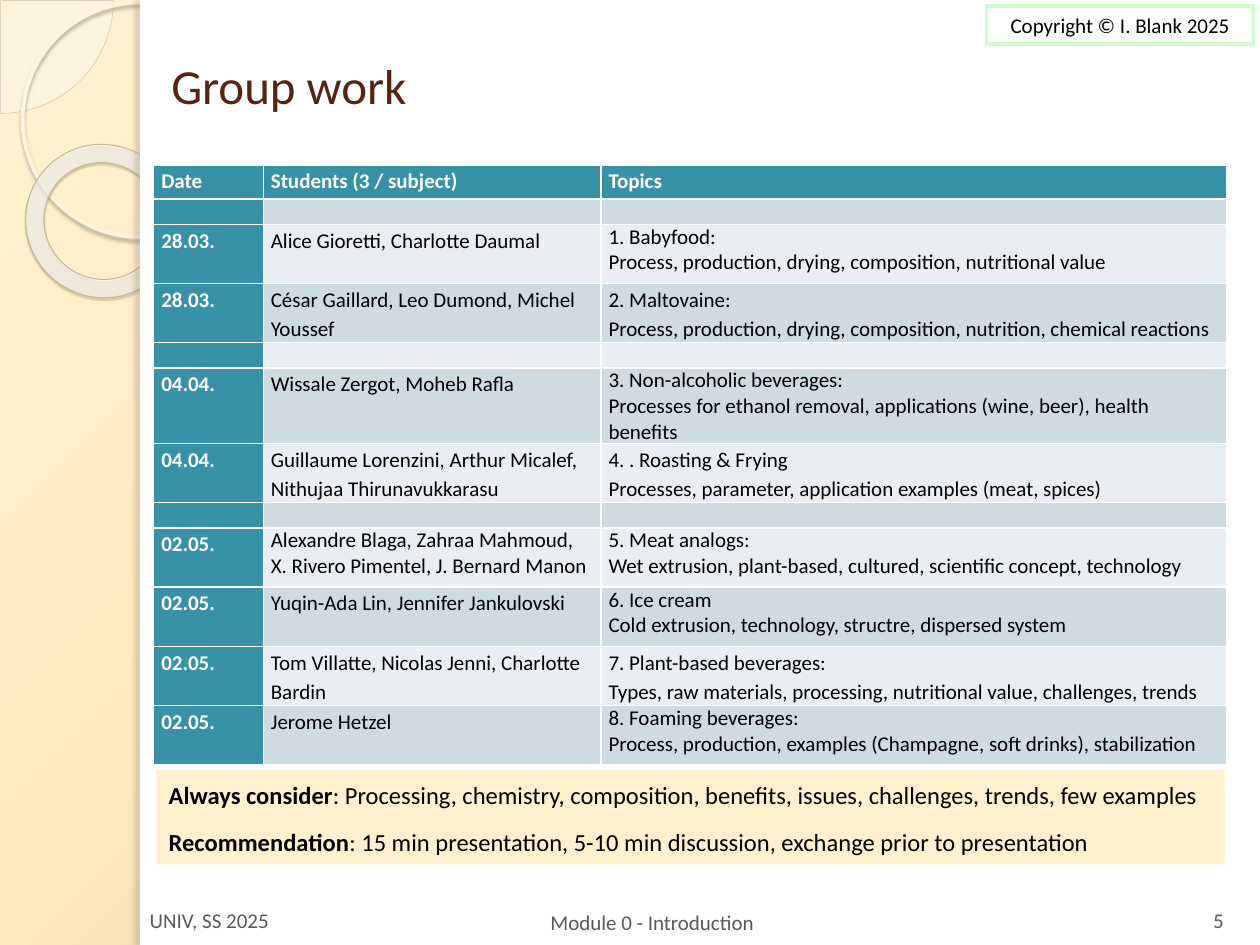
from typing import NamedTuple

from lxml import etree
from pptx import Presentation
from pptx.dml.color import RGBColor
from pptx.enum.shapes import MSO_SHAPE
from pptx.enum.text import MSO_ANCHOR, MSO_AUTO_SIZE, PP_ALIGN
from pptx.oxml.ns import qn
from pptx.util import Inches, Pt

PIE, OVAL, DONUT, RECT = MSO_SHAPE.PIE, MSO_SHAPE.OVAL, MSO_SHAPE.DONUT, MSO_SHAPE.RECTANGLE
TOP, MIDDLE, BOTTOM = MSO_ANCHOR.TOP, MSO_ANCHOR.MIDDLE, MSO_ANCHOR.BOTTOM
LEFT, CENTER = PP_ALIGN.LEFT, PP_ALIGN.CENTER
GROW = MSO_AUTO_SIZE.SHAPE_TO_FIT_TEXT
FONT = "Calibri"
TITLE_ONLY = 5
COLORS = {
    "black": "000000", "white": "FFFFFF", "title": "572314", "footer": "595959",
    "teal": "3891A7", "band_dark": "CEDCE1", "band_light": "E8EEF1",
    "note": "FFF1CE", "copyright": "CCFFCC",
    "pie": "FEFAF4", "pie_line": "D3C39F", "ring": "FFF5DE", "donut_line": "C7B893",
    "ring_shadow": "B0A68F", "donut_shadow": "5A5444", "panel_shadow": "736F63",
}


class Stop(NamedTuple):
    position: int
    color: str
    alpha: int = 100


class Shadow(NamedTuple):
    color: str
    alpha: int
    blur: float
    distance: float
    direction: int


class Session(NamedTuple):
    date: str = ""
    students: str = ""
    topic: tuple[str, ...] = ("",)
    student_spacing: float = 1.15
    topic_spacing: float = 1.0


BREAK = Session(topic_spacing=1.15)
SESSIONS = [
    BREAK,
    Session("28.03.", "Alice Gioretti, Charlotte Daumal",
            ("1. Babyfood:", "Process, production, drying, composition, nutritional value")),
    Session("28.03.", "César Gaillard, Leo Dumond, Michel Youssef",
            ("2. Maltovaine:",
             "Process, production, drying, composition, nutrition, chemical reactions"),
            topic_spacing=1.15),
    BREAK,
    Session("04.04.", "Wissale Zergot, Moheb Rafla",
            ("3. Non-alcoholic beverages:",
             "Processes for ethanol removal, applications (wine, beer), health benefits")),
    Session("04.04.", "Guillaume Lorenzini, Arthur Micalef, Nithujaa Thirunavukkarasu",
            ("4. . Roasting & Frying", "Processes, parameter, application examples (meat, spices)"),
            topic_spacing=1.15),
    BREAK,
    Session("02.05.", "Alexandre Blaga, Zahraa Mahmoud, X. Rivero Pimentel, J. Bernard Manon",
            ("5. Meat analogs:",
             "Wet extrusion, plant-based, cultured, scientific concept, technology"),
            student_spacing=1.0),
    Session("02.05.", "Yuqin-Ada Lin, Jennifer Jankulovski",
            ("6. Ice cream", "Cold extrusion, technology, structre, dispersed system")),
    Session("02.05.", "Tom Villatte, Nicolas Jenni, Charlotte Bardin",
            ("7. Plant-based beverages:",
             "Types, raw materials, processing, nutritional value, challenges, trends"),
            topic_spacing=1.15),
    Session("02.05.", "Jerome Hetzel",
            ("8. Foaming beverages:",
             "Process, production, examples (Champagne, soft drinks), stabilization")),
]


def rgb(name):
    return RGBColor.from_string(COLORS[name])


def write(frame, text, *, lead="", size=12, color="black", bold=False, align=LEFT,
          line_spacing=1.0, space_after=0):
    """Fill the empty first paragraph or add one; lead is a bold opening run."""
    first = frame.paragraphs[0]
    paragraph = frame.add_paragraph() if first.runs else first
    paragraph.alignment = align
    paragraph.line_spacing = line_spacing
    paragraph.space_after = Pt(space_after)
    for words, weight in ((lead, True), (text, bold)):
        if words:
            run = paragraph.add_run()
            run.text = words
            run.font.name, run.font.size, run.font.bold = FONT, Pt(size), weight
            run.font.color.rgb = rgb(color)
    if not paragraph.runs:
        paragraph._p.get_or_add_endParaRPr().set("sz", str(size * 100))


def add_color(parent, color, alpha):
    node = etree.SubElement(parent, qn("a:srgbClr"), val=color)
    if alpha < 100:
        etree.SubElement(node, qn("a:alpha"), val=str(alpha * 1000))


def make_radial(gradient, stops, left, top):
    """Turn a gradient into a circular one centred at left, top (percent)."""
    for child in list(gradient):
        gradient.remove(child)
    stop_list = etree.SubElement(gradient, qn("a:gsLst"))
    for stop in stops:
        node = etree.SubElement(stop_list, qn("a:gs"), pos=str(stop.position * 1000))
        add_color(node, stop.color, stop.alpha)
    circle = etree.SubElement(gradient, qn("a:path"))
    circle.set("path", "circle")
    sides = {"l": left, "t": top, "r": 100 - left, "b": 100 - top}
    etree.SubElement(circle, qn("a:fillToRect"),
                     {side: str(value * 1000) for side, value in sides.items()})


def add_shape(slide, kind, left, top, width, height, *, fill=None, alpha=100,
              line=None, line_width=1.0, shadow=None):
    shape = slide.shapes.add_shape(kind, Inches(left), Inches(top), Inches(width), Inches(height))
    shape.shadow.inherit = False
    if fill:
        shape.fill.solid()
        shape.fill.fore_color.rgb = rgb(fill)
        if alpha < 100:
            solid = shape._element.spPr.find(qn("a:solidFill"))
            etree.SubElement(solid[0], qn("a:alpha"), val=str(alpha * 1000))
    else:
        shape.fill.background()
    if line:
        shape.line.color.rgb = rgb(line)
        shape.line.width = Pt(line_width)
    else:
        shape.line.fill.background()
    if shadow:
        effects = shape._element.spPr.find(qn("a:effectLst"))
        outer = etree.SubElement(effects, qn("a:outerShdw"), blurRad=str(Pt(shadow.blur)),
                                 dist=str(Pt(shadow.distance)),
                                 dir=str(shadow.direction * 60000), rotWithShape="0")
        add_color(outer, COLORS[shadow.color], shadow.alpha)
    return shape


def add_label(slide, text, left, top, width, anchor, **text_format):
    box = slide.shapes.add_textbox(Inches(left), Inches(top), Inches(width), Inches(0.36))
    box.text_frame.word_wrap = True
    box.text_frame.vertical_anchor = anchor
    write(box.text_frame, text, color="footer", **text_format)


def draw_decoration(slide):
    slide.background.fill.gradient()
    make_radial(slide._element.xpath("./p:cSld/p:bg//a:gradFill")[0],
                [Stop(0, "FFF1D3"), Stop(40, "FFEBBE"), Stop(100, "C9B484")], -24, -20)
    pie = add_shape(slide, PIE, -0.89, -0.89, 1.79, 1.79, fill="pie", alpha=33,
                    line="pie_line", line_width=0.25)
    pie.adjustments[0], pie.adjustments[1] = 0, 54.02
    add_shape(slide, OVAL, 0.18, 0.02, 1.86, 1.86, line="ring", line_width=2.15,
              shadow=Shadow("ring_shadow", 85, 2, 2, 90))
    donut = add_shape(slide, DONUT, 0.2, 1.15, 1.23, 1.21, line="donut_line", line_width=0.58,
                      shadow=Shadow("donut_shadow", 35, 1, 1.2, 75))
    donut.adjustments[0] = 0.12
    donut.rotation = 38.6
    donut.fill.gradient()
    make_radial(donut._element.spPr.find(qn("a:gradFill")),
                [Stop(0, "FFFCF6", 70), Stop(70, "FFFEFB", 55), Stop(100, "F0D28E", 60)], -408, -50)
    add_shape(slide, RECT, 1.11, 0, 8.89, 7.5, fill="white")
    add_shape(slide, RECT, 1.11, 0, 0.08, 7.5, fill="white",
              shadow=Shadow("panel_shadow", 25, 3, 3, 180))


def fill_cell(cell, lines, fill, **text_format):
    cell.margin_left = cell.margin_right = Inches(0.06)
    cell.margin_top = cell.margin_bottom = 0
    cell.fill.solid()
    cell.fill.fore_color.rgb = rgb(fill)
    for line in lines:
        write(cell.text_frame, line, **text_format)


def draw_schedule(slide):
    table = slide.shapes.add_table(len(SESSIONS) + 1, 3, Inches(1.22), Inches(1.31),
                                   Inches(8.52), Inches(4.64)).table
    table.first_col = True
    for column, width in zip(table.columns, (0.87, 2.68, 4.97)):
        column.width = Inches(width)
    heading = {"color": "white", "bold": True, "line_spacing": 1.15, "space_after": 10}
    table.rows[0].height = Inches(0.27)
    for column, label in enumerate(("Date", "Students (3 / subject)", "Topics")):
        fill_cell(table.cell(0, column), [label], "teal", **heading)
    for row, session in enumerate(SESSIONS, start=1):
        table.rows[row].height = Inches(0.47 if session.date else 0.17)
        band = "band_dark" if row % 2 else "band_light"
        spacing = session.student_spacing
        fill_cell(table.cell(row, 0), [session.date], "teal", **heading)
        fill_cell(table.cell(row, 1), [session.students], band, line_spacing=spacing,
                  space_after=10 if spacing > 1 else 0)
        fill_cell(table.cell(row, 2), session.topic, band, line_spacing=session.topic_spacing)


def main():
    deck = Presentation()
    deck.slide_width, deck.slide_height = Inches(10), Inches(7.5)
    slide = deck.slides.add_slide(deck.slide_layouts[TITLE_ONLY])
    draw_decoration(slide)

    copyright_box = add_shape(slide, RECT, 7.83, 0.05, 2.12, 0.3, line="copyright", line_width=2)
    copyright_box.text_frame.auto_size = GROW
    write(copyright_box.text_frame, "Copyright © I. Blank 2025", align=CENTER)

    title = slide.shapes.title
    title.left, title.top, title.width, title.height = map(Inches, (1.26, 0.2, 8.52, 0.95))
    title.text_frame.vertical_anchor = MIDDLE
    write(title.text_frame, "Group work", size=28, color="title")
    slide.shapes._spTree.append(title._element)  # in front of the white panel

    add_label(slide, "UNIV, SS 2025", 1.09, 7.09, 2.33, BOTTOM)
    add_label(slide, "5", 9.42, 7.09, 0.5, BOTTOM, align=CENTER)
    draw_schedule(slide)
    add_label(slide, "Module 0 - Introduction", 4.27, 7.14, 3.17, MIDDLE)

    advice = add_shape(slide, RECT, 1.24, 6.11, 8.48, 0.75, fill="note").text_frame
    advice.word_wrap, advice.auto_size, advice.vertical_anchor = True, GROW, TOP
    write(advice, ": Processing, chemistry, composition, benefits, issues, challenges, trends, "
          "few examples", lead="Always consider", size=14, line_spacing=1.15, space_after=10)
    write(advice, ": 15 min presentation, 5-10 min discussion, exchange prior to presentation",
          lead="Recommendation", size=14)
    deck.save("out.pptx")


if __name__ == "__main__":
    main()
